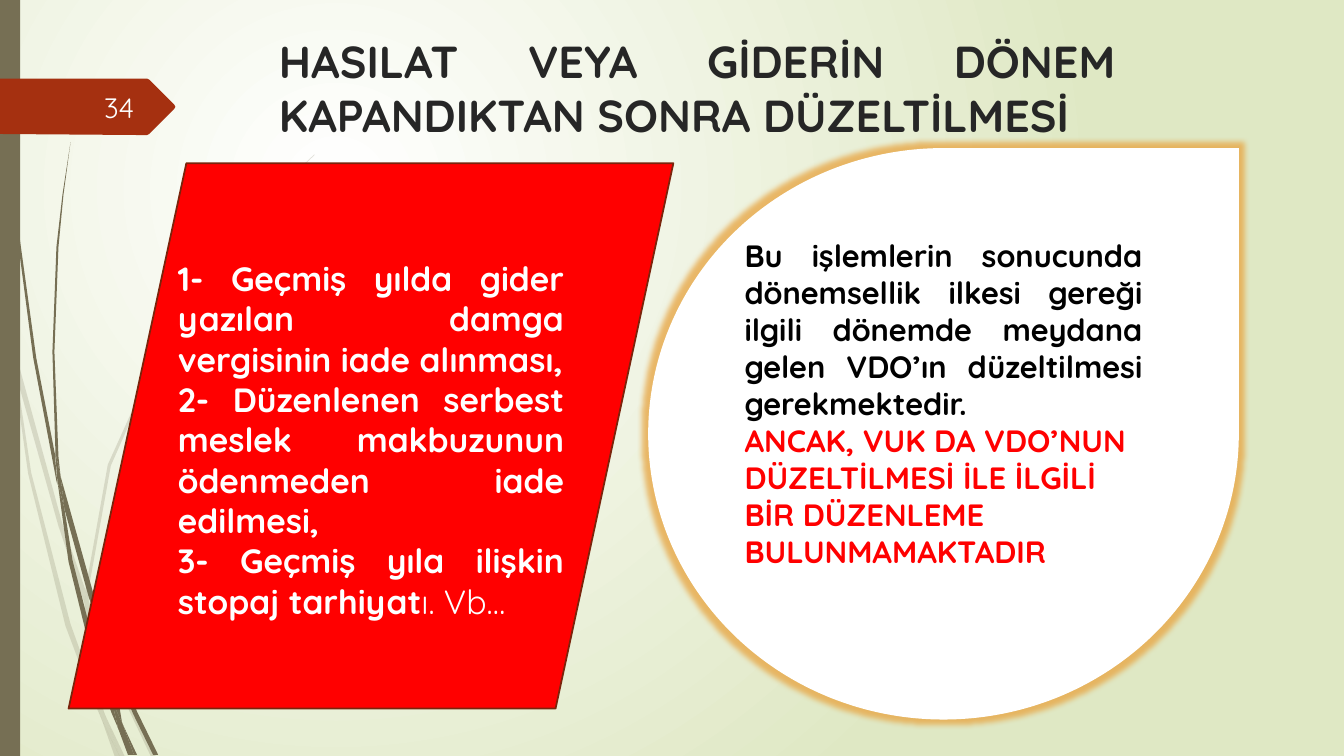
from lxml import etree
from pptx import Presentation
from pptx.dml.color import RGBColor
from pptx.enum.shapes import MSO_SHAPE
from pptx.enum.text import MSO_ANCHOR, PP_ALIGN
from pptx.oxml.ns import qn
from pptx.util import Pt

TOP, MIDDLE = MSO_ANCHOR.TOP, MSO_ANCHOR.MIDDLE
LEFT, RIGHT, JUSTIFY = PP_ALIGN.LEFT, PP_ALIGN.RIGHT, PP_ALIGN.JUSTIFY
RECT, SLANT, DROP = MSO_SHAPE.RECTANGLE, MSO_SHAPE.PARALLELOGRAM, MSO_SHAPE.TEAR
FONT = "Quicksand"
OLIVE, RUST, RED, WHITE = "766F54", "A53010", "FF0000", "FFFFFF"
UNIT = Pt(0.72)


def paint(fill, color):
    fill.solid()
    fill.fore_color.rgb = RGBColor.from_string(color)


def write(shape, lines, size, anchor, bold=True):
    frame = shape.text_frame
    frame.word_wrap = True
    frame.vertical_anchor = anchor
    for i, (text, align, color) in enumerate(lines):
        para = frame.add_paragraph() if i else frame.paragraphs[0]
        para.text = text
        para.alignment = align
        para.font.name = FONT
        para.font.size = Pt(size)
        para.font.bold = bold
        para.font.color.rgb = RGBColor.from_string(color)


prs = Presentation()
prs.slide_width, prs.slide_height = Pt(960), Pt(540)
slide = prs.slides.add_slide(prs.slide_layouts[6])
shapes = slide.shapes

back = slide.background.fill
back.gradient()
for stop, color in zip(back.gradient_stops, (WHITE, "DFE8C4")):
    stop.color.rgb = RGBColor.from_string(color)
grad = slide.element.find(".//" + qn("a:gradFill"))
line = grad.find(qn("a:lin"))
round_ = etree.Element(qn("a:path"), {"path": "circle"})
etree.SubElement(round_, qn("a:fillToRect"), l="50000", t="50000", r="100000", b="100000")
grad.replace(line, round_)

pale = [
    [(11, 350), (9, 322), (0, 282), (0, 299), (10, 344)],
    [(58, 522), (84, 599), (85, 586), (62, 520), (14, 345), (17, 376)],
    [(92, 607), (88, 596), (88, 610), (123, 694), (150, 751), (155, 751), (127, 692)],
    [(119, 751), (124, 751), (105, 711)],
    [(93, 683), (70, 619), (31, 469), (17, 376), (11, 350), (28, 470), (65, 621),
     (92, 693), (101, 714), (99, 707)],
    [(84, 599), (87, 646), (93, 683), (96, 692), (105, 711), (103, 706), (91, 646),
     (88, 610), (88, 608)],
    [(88, 584), (110, 462), (160, 349), (229, 245), (268, 198), (290, 175), (312, 154),
     (312, 153), (289, 175), (268, 197), (228, 244), (158, 348), (107, 461), (85, 584),
     (85, 586), (88, 596)],
    [(101, 714), (114, 751), (119, 751)],
    [(88, 608), (88, 596), (85, 586), (84, 599)],
    [(96, 692), (93, 683), (99, 707), (101, 714), (119, 751), (105, 711)],
]
dark = [
    [(7, 110), (17, 233), (33, 355), (56, 477), (57, 481), (55, 457), (55, 453),
     (36, 355), (19, 232), (8, 109), (5, 48), (4, 0), (3, 0), (4, 48)],
    [(88, 592), (106, 645), (106, 631), (93, 590), (60, 472), (64, 505)],
    [(113, 649), (110, 641), (111, 656), (132, 708), (152, 749), (157, 749), (136, 706)],
    [(110, 691), (98, 657), (72, 556), (64, 505), (57, 477), (68, 557), (93, 659),
     (111, 708), (117, 722), (116, 717)],
    [(60, 472), (58, 453), (54, 349), (58, 245), (63, 193), (70, 141), (62, 193),
     (56, 245), (52, 349), (55, 449)],
    [(133, 749), (136, 749), (122, 719)],
    [(57, 477), (64, 505), (60, 472), (55, 449), (55, 453)],
    [(111, 633), (125, 552), (158, 476), (205, 406), (231, 374), (245, 359), (261, 344),
     (260, 344), (245, 358), (231, 373), (204, 405), (156, 474), (122, 551), (106, 631),
     (110, 641)],
    [(117, 722), (127, 749), (131, 749)],
    [(106, 645), (110, 691), (116, 706), (122, 719), (121, 716), (111, 656), (109, 651)],
    [(106, 645), (109, 651), (111, 656), (110, 641), (106, 631)],
    [(116, 706), (110, 691), (116, 717), (117, 722), (130, 749), (133, 749), (122, 719)],
]
badge = [[(173, 108), (148, 133), (146, 134), (136, 134), (0, 133), (0, 78), (146, 78),
          (148, 79), (173, 104), (174, 106)]]

stem = shapes.add_shape(RECT, 0, 0, Pt(14.4), Pt(540))
stem.shadow.inherit = False
paint(stem.fill, OLIVE)
stem.line.fill.background()

for group, color, alpha in ((pale, OLIVE, 20), (dark, OLIVE, 100), (badge, RUST, 100)):
    for points in group:
        pen = shapes.build_freeform(*points[0], scale=UNIT)
        pen.add_line_segments(points[1:])
        leaf = pen.convert_to_shape()
        leaf.shadow.inherit = False
        paint(leaf.fill, color)
        leaf.line.fill.background()
        if alpha < 100:
            tint = leaf.fill._xPr.find(".//" + qn("a:srgbClr"))
            etree.SubElement(tint, qn("a:alpha"), val=str(alpha * 1000))

title = shapes.add_textbox(Pt(192.2), Pt(20.9), Pt(612), Pt(96.5))
write(title, [("HASILAT VEYA GİDERİN DÖNEM KAPANDIKTAN SONRA DÜZELTİLMESİ", JUSTIFY, "262626")],
      32, TOP)

number = shapes.add_textbox(Pt(41.8), Pt(61.9), Pt(61.2), Pt(28.8))
write(number, [("34", RIGHT, "FEFFFF")], 20, MIDDLE, False)

cases = shapes.add_shape(SLANT, Pt(49), Pt(116.6), Pt(432), Pt(389.5))
cases.adjustments[0] = 0.216
cases.shadow.inherit = False
paint(cases.fill, RED)
paint(cases.line.fill, "7A240C")
cases.line.width = Pt(1.25)
write(cases, [
    ("1- Geçmiş yılda gider yazılan damga vergisinin iade alınması,", JUSTIFY, WHITE),
    ("2- Düzenlenen serbest meslek makbuzunun ödenmeden iade edilmesi,", JUSTIFY, WHITE),
    ("3- Geçmiş yıla ilişkin stopaj tarhiyat", JUSTIFY, WHITE),
], 24, TOP)
tail = cases.text_frame.paragraphs[-1].add_run()
tail.text = "ı. Vb…"
tail.font.bold = False

result = shapes.add_shape(DROP, Pt(463), Pt(105.8), Pt(421.9), Pt(408.2))
result.shadow.inherit = False
paint(result.fill, WHITE)
result.line.fill.background()
effects = result._element.spPr.find(qn("a:effectLst"))
glow = etree.SubElement(effects, qn("a:glow"), rad=str(Pt(8)))
shade = etree.SubElement(glow, qn("a:srgbClr"), val="E8A848")
etree.SubElement(shade, qn("a:alpha"), val="80000")
write(result, [
    ("Bu işlemlerin sonucunda dönemsellik ilkesi gereği ilgili dönemde meydana gelen "
     "VDO’ın düzeltilmesi gerekmektedir.", JUSTIFY, "000000"),
    ("ANCAK, VUK DA VDO’NUN DÜZELTİLMESİ İLE İLGİLİ BİR DÜZENLEME BULUNMAMAKTADIR",
     LEFT, RED),
], 22, TOP)

prs.save("out.pptx")
